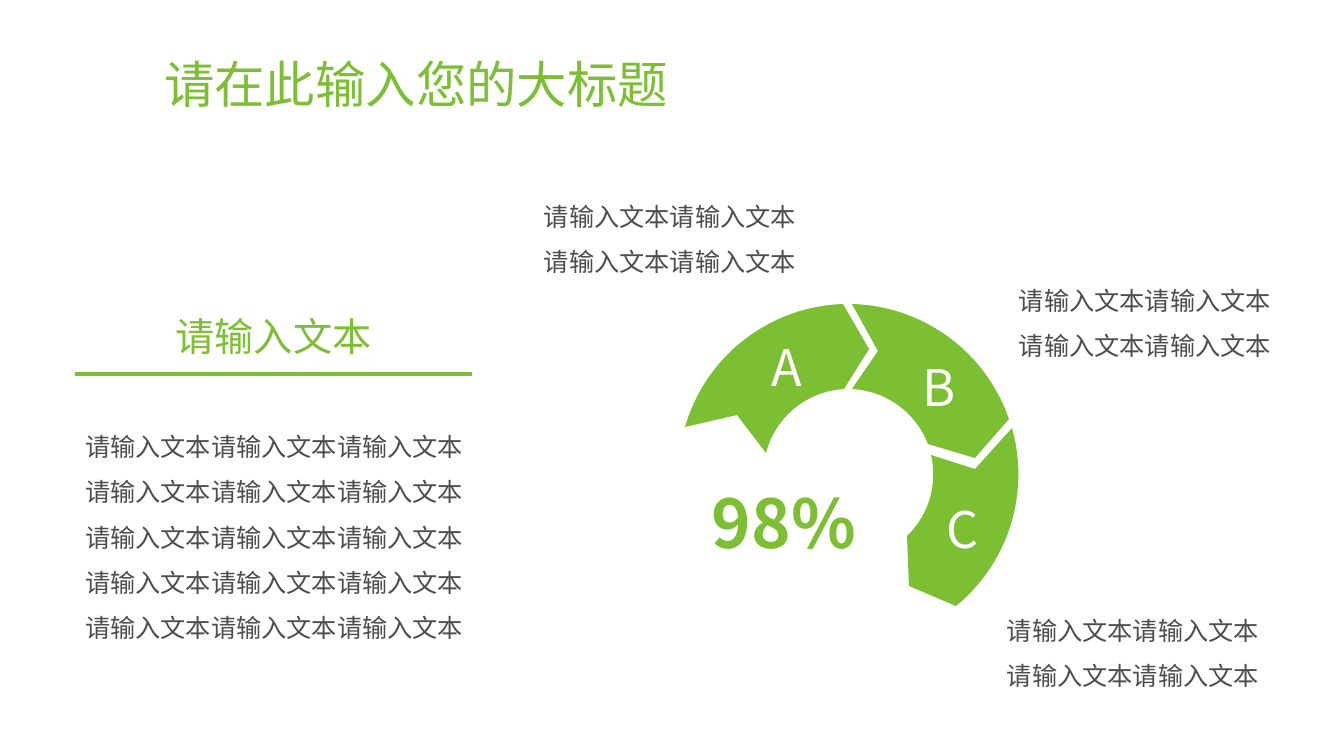
from dataclasses import dataclass
from math import atan2, cos, hypot, sin

from lxml import etree
from pptx import Presentation
from pptx.dml.color import RGBColor
from pptx.enum.shapes import MSO_CONNECTOR
from pptx.enum.text import MSO_ANCHOR, PP_ALIGN
from pptx.oxml.ns import qn
from pptx.util import Pt

LEFT, CENTER = PP_ALIGN.LEFT, PP_ALIGN.CENTER
TOP, MIDDLE = MSO_ANCHOR.TOP, MSO_ANCHOR.MIDDLE
STRAIGHT = MSO_CONNECTOR.STRAIGHT


@dataclass(frozen=True)
class Theme:
    font: str = "Noto Sans CJK SC"
    green: RGBColor = RGBColor(0x7C, 0xBF, 0x33)
    gray: RGBColor = RGBColor(0x4D, 0x4D, 0x4D)
    white: RGBColor = RGBColor(0xFF, 0xFF, 0xFF)
    title: int = 36
    letter: int = 36
    rate: int = 48
    head: int = 28
    body: int = 18
    rule: int = 3


THEME = Theme()
PHRASE = "请输入文本"

# Boxes are left, top, width, height in px
TITLE = ("请在此输入您的大标题", (154, 40, 1068, 94))
HEAD = (PHRASE, (71, 284, 405, 80))
BODY = (PHRASE * 15, (66, 401, 416, 257))
RATE = ("98%", (638, 476, 292, 92))
RULE = (75, 374, 472, 374)

NOTE = PHRASE * 4
NOTE_SIZE = (278, 145)
NOTES = [(534, 159), (1009, 243), (997, 573)]

LETTER_SIZE = (131, 72)
LETTERS = [("A", (721, 331)), ("B", (874, 351)), ("C", (897, 493))]

HUB = (848, 475)
STEPS = 24
# Each arrow: outer arc ends, tip, inner arc ends, notch
ARROWS = [
    ((685, 427), (843, 304), (869, 349), (844, 389), (766, 453), (737, 415)),
    ((852, 304), (1009, 419), (975, 458), (928, 444), (852, 389), (878, 351)),
    ((1012, 428), (956, 606), (909, 586), (907, 536), (931, 455), (975, 469)),
]

WIDTH, HEIGHT = 1344, 756
SCALE = 914400 / 100.8


def emu(*px):
    return [round(n * SCALE) for n in px]


def write(shape, text, size, color, align=CENTER, anchor=MIDDLE,
          bold=False, space=None):
    frame = shape.text_frame
    frame.word_wrap = True
    frame.vertical_anchor = anchor
    par = frame.paragraphs[0]
    par.alignment = align
    par.line_spacing = space
    run = par.add_run()
    run.text = text
    font = run.font
    font.name, font.size, font.bold = THEME.font, Pt(size), bold
    font.color.rgb = color
    east = etree.Element(qn("a:ea"), typeface=THEME.font)
    run._r.rPr.find(qn("a:latin")).addnext(east)


def label(slide, text, box, size, color, **look):
    write(slide.shapes.add_textbox(*emu(*box)), text, size, color, **look)


def arc(start, end):
    """Points around the hub, easing the radius from start to end."""
    (r1, a1), (r2, a2) = [
        (hypot(x - HUB[0], y - HUB[1]), atan2(y - HUB[1], x - HUB[0]))
        for x, y in (start, end)]
    points = []
    for i in range(STEPS + 1):
        part = i / STEPS
        r, a = r1 + (r2 - r1) * part, a1 + (a2 - a1) * part
        points.append((HUB[0] + r * cos(a), HUB[1] + r * sin(a)))
    return points


def arrow(slide, rim1, rim2, tip, core1, core2, notch):
    points = [emu(*p) for p in
              arc(rim1, rim2) + [tip] + arc(core1, core2) + [notch]]
    pen = slide.shapes.build_freeform(*points[0], scale=1.0)
    pen.add_line_segments(points[1:], close=True)
    shape = pen.convert_to_shape()
    shape.shadow.inherit = False
    shape.fill.solid()
    shape.fill.fore_color.rgb = THEME.green
    shape.line.fill.background()


def rule(slide):
    line = slide.shapes.add_connector(STRAIGHT, *emu(*RULE))
    line.line.color.rgb = THEME.green
    line.line.width = Pt(THEME.rule)
    etree.SubElement(line._element.spPr, qn("a:effectLst"))


def main():
    deck = Presentation()
    deck.slide_width, deck.slide_height = emu(WIDTH, HEIGHT)
    slide = deck.slides.add_slide(deck.slide_layouts[5])

    text, box = TITLE
    title = slide.shapes.title
    title.left, title.top, title.width, title.height = emu(*box)
    write(title, text, THEME.title, THEME.green, align=LEFT, space=0.9)

    for points in ARROWS:
        arrow(slide, *points)
    for text, spot in LETTERS:
        label(slide, text, spot + LETTER_SIZE, THEME.letter, THEME.white,
              anchor=TOP)
    for spot in NOTES:
        label(slide, NOTE, spot + NOTE_SIZE, THEME.body, THEME.gray,
              align=LEFT, space=1.5)
    label(slide, *RATE, THEME.rate, THEME.green, anchor=TOP, bold=True)
    rule(slide)
    label(slide, *BODY, THEME.body, THEME.gray, space=1.5)
    label(slide, *HEAD, THEME.head, THEME.green, space=1.5)
    deck.save("out.pptx")


if __name__ == "__main__":
    main()
